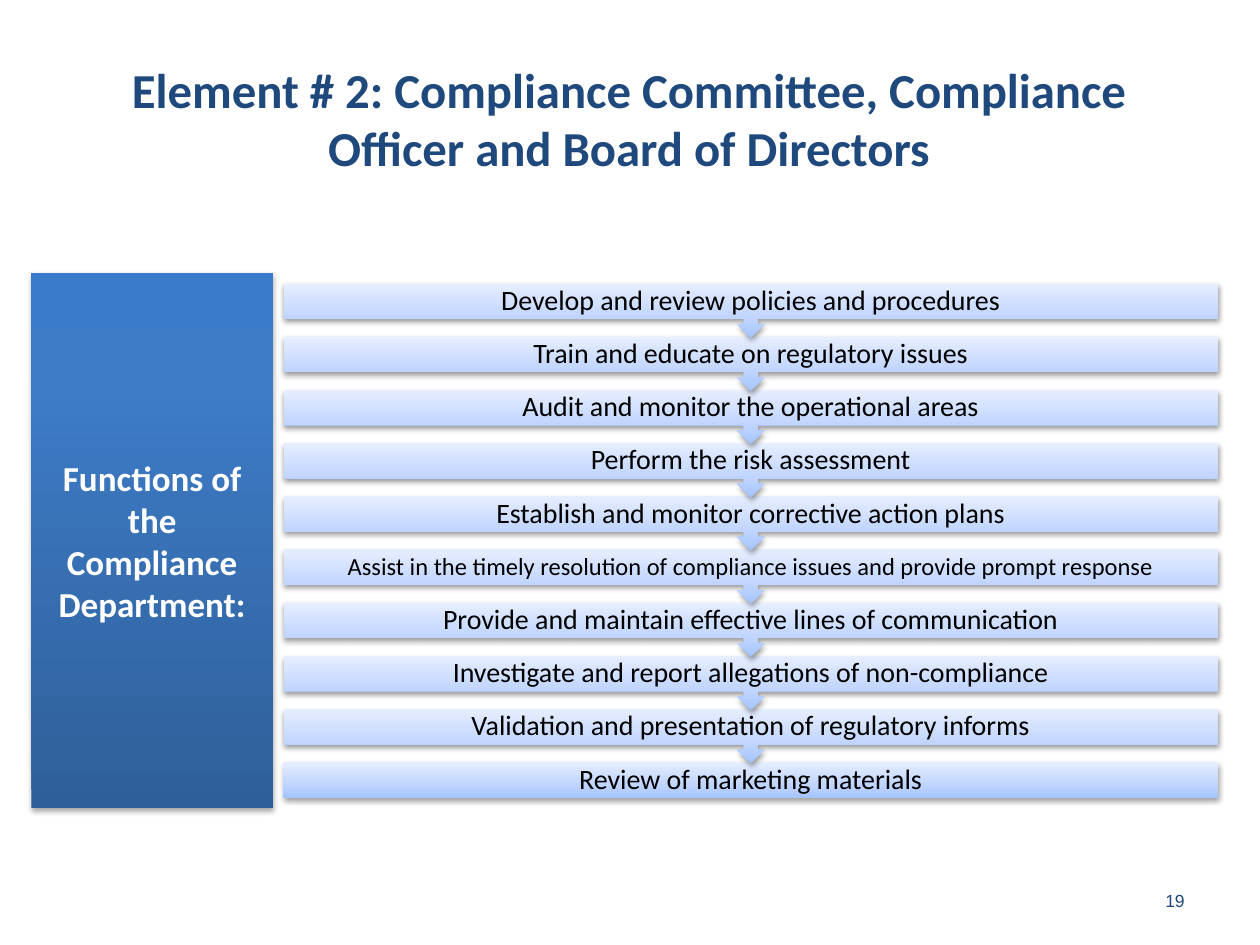
from pptx import Presentation
from pptx.dml.color import RGBColor
from pptx.enum.shapes import MSO_SHAPE
from pptx.enum.text import MSO_ANCHOR, PP_ALIGN
from pptx.oxml import parse_xml
from pptx.oxml.ns import nsdecls, qn
from pptx.util import Pt

RECTANGLE = MSO_SHAPE.RECTANGLE
CALLOUT = MSO_SHAPE.UP_ARROW_CALLOUT
MIDDLE = MSO_ANCHOR.MIDDLE
CENTER = PP_ALIGN.CENTER
RIGHT = PP_ALIGN.RIGHT

NAVY = "1F497D"
WHITE = "FFFFFF"
BLACK = "000000"
PANEL_STOPS = [(0, "2F5F99"), (80, "3D7CC7"), (100, "3A7CCB")]
STEP_STOPS = [(0, "A4C4FF"), (35, "BFD4FF"), (100, "E6EEFF")]

STEPS = [
    ("Develop and review policies and procedures", 16),
    ("Train and educate on regulatory issues", 16),
    ("Audit and monitor the operational areas", 16),
    ("Perform the risk assessment", 16),
    ("Establish and monitor corrective action plans", 16),
    ("Assist in the timely resolution of compliance issues and provide prompt response", 14),
    ("Provide and maintain effective lines of communication", 16),
    ("Investigate and report allegations of non-compliance", 16),
    ("Validation and presentation of regulatory informs", 16),
    ("Review of marketing materials", 16),
]


def color(hex_value):
    return RGBColor.from_string(hex_value)


def points(box):
    return [Pt(length) for length in box]


def write(frame, text, size, hex_value, font="Calibri", bold=False, align=CENTER):
    frame.word_wrap = True
    frame.vertical_anchor = MIDDLE
    paragraph = frame.paragraphs[0]
    paragraph.alignment = align
    run = paragraph.add_run()
    run.text = text
    run.font.name = font
    run.font.size = Pt(size)
    run.font.bold = bold
    run.font.color.rgb = color(hex_value)
    return paragraph


def add_label(slide, box, text, size, hex_value, **style):
    label = slide.shapes.add_textbox(*points(box))
    write(label.text_frame, text, size, hex_value, **style)
    return label


def add_block(slide, kind, box, stops, shadow_alpha, shadow_distance):
    block = slide.shapes.add_shape(kind, *points(box))
    block.line.fill.background()
    block.fill.gradient()
    properties = block.element.spPr
    stop_list = "".join(
        f'<a:gs pos="{position * 1000}"><a:srgbClr val="{hex_value}"/></a:gs>'
        for position, hex_value in stops
    )
    gradient = parse_xml(
        f'<a:gradFill {nsdecls("a")} rotWithShape="0"><a:gsLst>{stop_list}</a:gsLst>'
        '<a:lin ang="16200000" scaled="0"/></a:gradFill>'
    )
    properties.replace(properties.find(qn("a:gradFill")), gradient)
    block.shadow.inherit = False
    properties.find(qn("a:effectLst")).append(parse_xml(
        f'<a:outerShdw {nsdecls("a")} blurRad="{Pt(3.1)}" dist="{Pt(shadow_distance)}" '
        f'dir="5400000" rotWithShape="0"><a:srgbClr val="{BLACK}">'
        f'<a:alpha val="{shadow_alpha * 1000}"/></a:srgbClr></a:outerShdw>'
    ))
    return block


def add_panel(slide, box):
    panel = add_block(slide, RECTANGLE, box, PANEL_STOPS, 35, 1.8)
    write(panel.text_frame, "Functions of the Compliance Department:", 20, WHITE, bold=True)


def add_step(slide, box, bar_height, text, size, is_last):
    left, top, width, height = box
    bar_box = (left, top, width, bar_height)
    if is_last:
        add_block(slide, RECTANGLE, bar_box, STEP_STOPS, 38, 1.6)
    else:
        add_block(slide, CALLOUT, box, STEP_STOPS, 38, 1.6).rotation = 180
    label = add_label(slide, bar_box, text, size, BLACK)
    frame = label.text_frame
    inset = Pt(size * 0.54)
    frame.margin_left = frame.margin_right = inset
    frame.margin_top = frame.margin_bottom = inset
    frame.paragraphs[0].line_spacing = 0.9


def add_steps(slide, box):
    left, top, width, height = box
    bar_height = 20.2
    callout_height = 31
    pitch = (height - bar_height) / (len(STEPS) - 1)
    last = len(STEPS) - 1
    for index in range(last, -1, -1):
        text, size = STEPS[index]
        step_box = (left, top + index * pitch, width, callout_height)
        add_step(slide, step_box, bar_height, text, size, index == last)


def main():
    deck = Presentation()
    deck.slide_width = Pt(720)
    deck.slide_height = Pt(540)
    slide = deck.slides.add_slide(deck.slide_layouts[6])
    add_label(slide, (516, 500, 168, 29), "19", 10, NAVY, font="Arial", align=RIGHT)
    add_label(
        slide, (35.5, 28.5, 648, 78),
        "Element # 2: Compliance Committee, Compliance Officer and Board of Directors",
        27.9, NAVY, bold=True,
    )
    add_panel(slide, (18, 156, 138, 306))
    add_steps(slide, (162, 162, 534, 293.8))
    deck.save("out.pptx")


if __name__ == "__main__":
    main()
